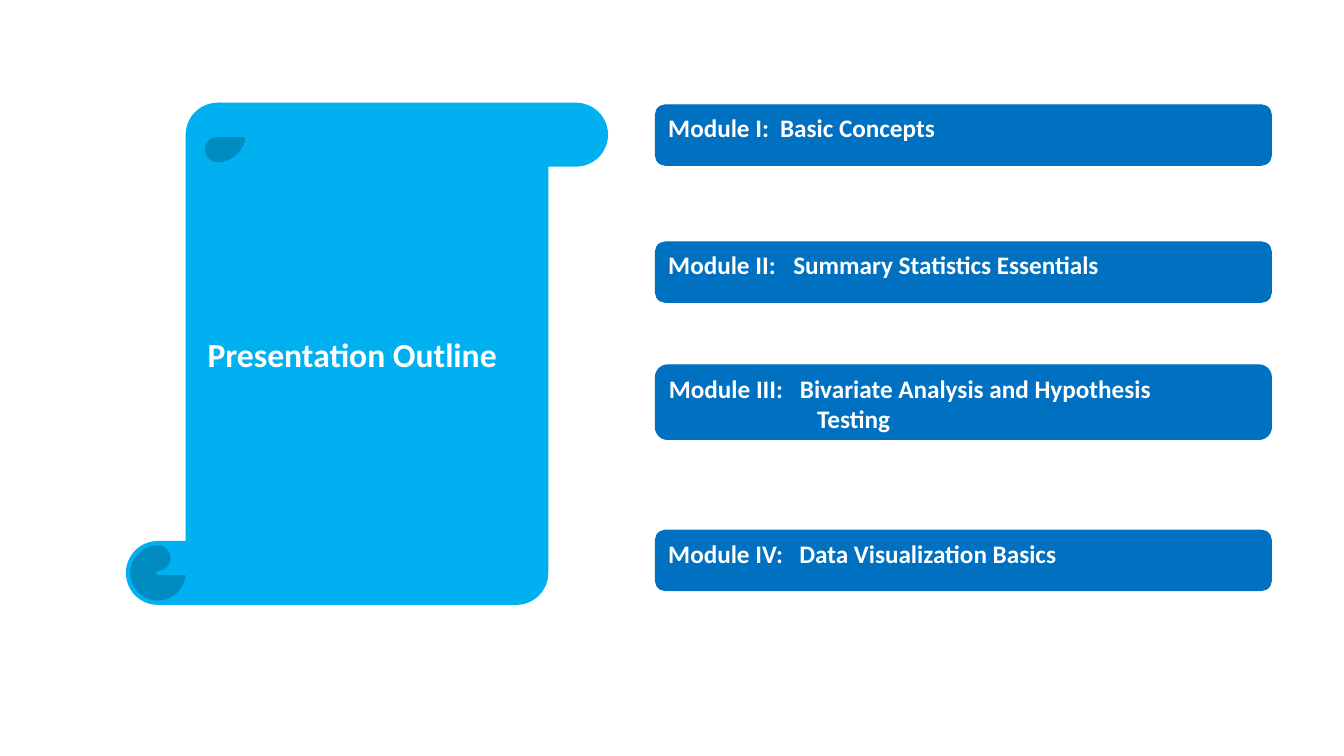
from pptx import Presentation
from pptx.dml.color import RGBColor
from pptx.enum.shapes import MSO_SHAPE
from pptx.enum.text import MSO_ANCHOR, PP_ALIGN
from pptx.oxml.xmlchemy import OxmlElement
from pptx.util import Inches, Pt

COLORS = {"module": "0070C0", "scroll": "00B0F0", "text": "FFFFFF"}
FONT = {"name": "Calibri", "bold": True}

# Top and height of each bar, label, title start, title lines, indent of line two
MODULES = [
    (0, 0.6, "Module I:", 1.11, ["Basic Concepts"], 0),
    (1.36, 0.6, "Module II:", 1.24, ["Summary Statistics Essentials"], 0),
    (2.58, 0.74, "Module III:", 1.3,
     ["Bivariate Analysis and Hypothesis", "Testing"], 1.47),
    (4.22, 0.6, "Module IV:", 1.3, ["Data Visualization Basics"], 0),
]


def add_filled(s, kind, box, color, line_width):
    sp = s.shapes.add_shape(kind, *map(Inches, box))
    sp.shadow.inherit = False
    sp.fill.solid()
    sp.fill.fore_color.rgb = RGBColor.from_string(COLORS[color])
    sp.line.color.rgb = RGBColor.from_string(COLORS[color])
    sp.line.width = Pt(line_width)
    return sp


def write(p, text, size):
    p.alignment = PP_ALIGN.LEFT
    r = p.add_run()
    r.text = text
    for key, value in {**FONT, "size": Pt(size)}.items():
        setattr(r.font, key, value)
    r.font.color.rgb = RGBColor.from_string(COLORS["text"])


def set_tab(p, position):
    tabs = OxmlElement("a:tabLst")
    tab = OxmlElement("a:tab")
    tab.set("pos", str(Inches(position)))
    tab.set("algn", "l")
    tabs.append(tab)
    p._p.get_or_add_pPr().append(tabs)


def add_scroll(s, left, top, width, height):
    # Scroll
    add_filled(s, MSO_SHAPE.VERTICAL_SCROLL, (left, top, width, height),
               "scroll", 3)
    # Heading on the scroll
    box = (left + 0.69, top + 0.45 * height, width - 1.36, 0.5)
    tf = s.shapes.add_textbox(*map(Inches, box)).text_frame
    tf.word_wrap = True
    write(tf.paragraphs[0], "Presentation Outline", 24)


def add_modules(s, left, top, width):
    for offset, height, label, start, lines, indent in MODULES:
        # Bar
        sp = add_filled(s, MSO_SHAPE.ROUNDED_RECTANGLE,
                        (left, top + offset, width, height), "module", 0.75)
        tf = sp.text_frame
        tf.word_wrap = True
        tf.vertical_anchor = MSO_ANCHOR.TOP
        # Label and title
        p = tf.paragraphs[0]
        write(p, f"{label}\t{lines[0]}", 18)
        set_tab(p, start)
        # Further title lines
        for line in lines[1:]:
            p = tf.add_paragraph()
            write(p, line, 18)
            p._p.get_or_add_pPr().set("marL", str(Inches(indent)))


def main():
    prs = Presentation()
    prs.slide_width, prs.slide_height = Inches(13.33), Inches(7.5)
    s = prs.slides.add_slide(prs.slide_layouts[6])
    add_modules(s, 6.5, 1.04, 6.11)
    add_scroll(s, 1.27, 1.04, 4.74, 4.94)
    prs.save("out.pptx")


if __name__ == "__main__":
    main()
